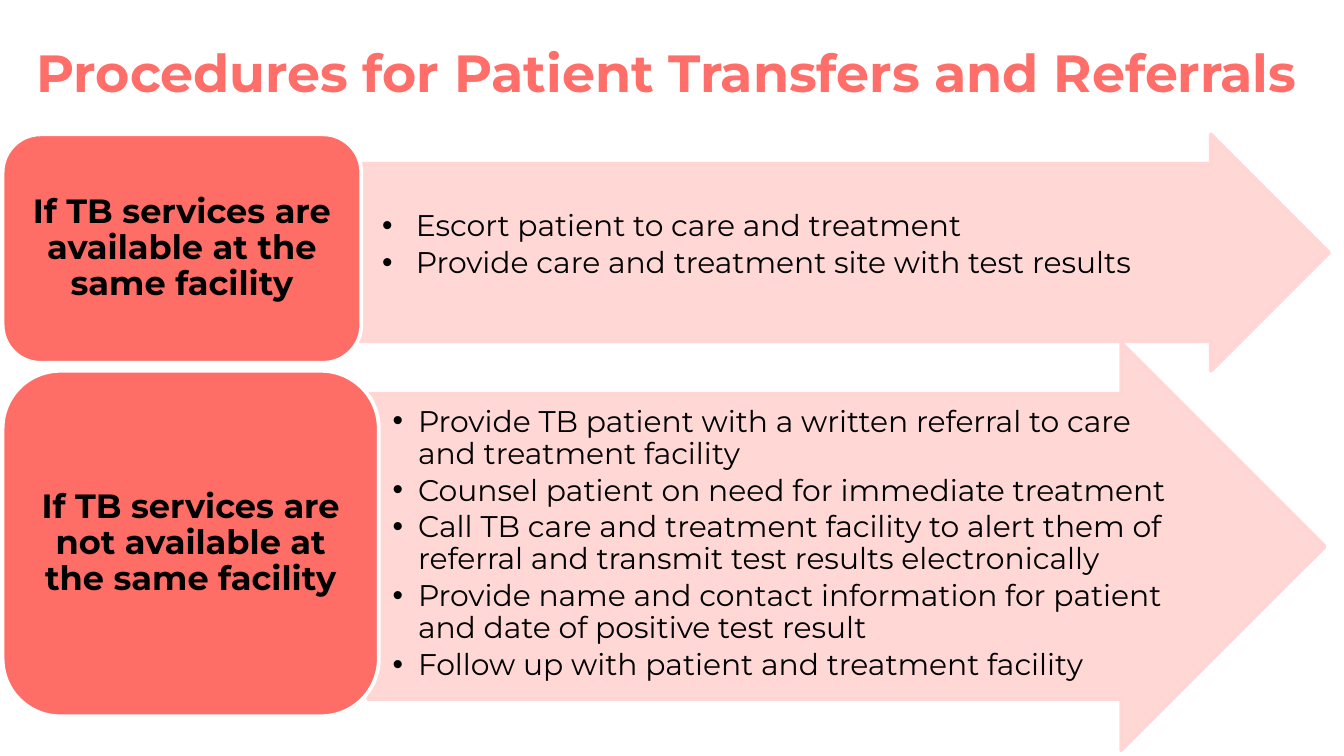
import pptx
import pptx.dml.color
import pptx.enum.shapes
import pptx.enum.text
import pptx.oxml
import pptx.util
from dataclasses import dataclass
from lxml import etree
from pptx.oxml.ns import qn

Cm = pptx.util.Cm
Pt = pptx.util.Pt
SHAPES = pptx.enum.shapes.MSO_SHAPE
ALIGN = pptx.enum.text.PP_ALIGN
ANCHOR = pptx.enum.text.MSO_ANCHOR
AUTO_SIZE = pptx.enum.text.MSO_AUTO_SIZE


@dataclass(frozen=True)
class Theme:
    font: str = "Montserrat"
    title: str = "FF6E68"
    condition: str = "FF6D67"
    arrow: str = "FFD4D2"
    outline: str = "FFFFFF"
    text: str = "000000"
    arrow_opacity: int = 89
    title_size: int = 28
    condition_size: int = 18
    step_size: int = 16
    line_width: int = 2
    line_spacing: float = 0.9
    step_gap: float = 2.4


THEME = Theme()

# Boxes are left, top, width, height in centimetres
TITLE_BOX = (0.43, 0.64, 25.88, 1.45)
PROCEDURES = [
    {
        "condition": "If TB services are available at the same facility",
        "condition_box": (0.05, 2.54, 6.78, 4.32),
        "arrow_box": (6.78, 2.54, 18.34, 4.47),
        "steps_box": (7.19, 3.96, 15.65, 1.6),
        "indent": 0.64,
        "steps": [
            "Escort patient to care and treatment",
            "Provide care and treatment site with test results",
        ],
    },
    {
        "condition": "If TB services are not available at the same facility",
        "condition_box": (0.05, 7.01, 7.11, 6.53),
        "arrow_box": (6.96, 6.48, 18.08, 7.7),
        "steps_box": (7.39, 7.65, 15.24, 5.61),
        "indent": 0.48,
        "steps": [
            "Provide TB patient with a written referral to care and treatment facility",
            "Counsel patient on need for immediate treatment",
            "Call TB care and treatment facility to alert them of referral "
            "and transmit test results electronically",
            "Provide name and contact information for patient and date of positive test result",
            "Follow up with patient and treatment facility",
        ],
    },
]


def rgb(color):
    return pptx.dml.color.RGBColor.from_string(color)


def place(part, box):
    part.left, part.top, part.width, part.height = (Cm(length) for length in box)


def add_run(paragraph, text, size, color, bold=False):
    run = paragraph.add_run()
    run.text = text
    run.font.name = THEME.font
    run.font.size = Pt(size)
    run.font.bold = bold
    run.font.color.rgb = rgb(color)


def add_block(slide, kind, box, fill, line):
    block = slide.shapes.add_shape(kind, *(Cm(length) for length in box))
    block.shadow.inherit = False
    block.fill.solid()
    block.fill.fore_color.rgb = rgb(fill)
    block.line.color.rgb = rgb(line)
    block.line.width = Pt(THEME.line_width)
    return block


def write_title(title, box):
    place(title, box)
    frame = title.text_frame
    frame.auto_size = AUTO_SIZE.NONE
    frame.vertical_anchor = ANCHOR.TOP
    heading = frame.paragraphs[0]
    heading.alignment = ALIGN.LEFT
    add_run(heading, "Procedures for Patient Transfers and Referrals",
            THEME.title_size, THEME.title, bold=True)


def draw_arrow(slide, box):
    arrow = add_block(slide, SHAPES.RIGHT_ARROW, box, THEME.arrow, THEME.arrow)
    arrow.adjustments[0], arrow.adjustments[1] = 0.75, 0.5
    # Fill and outline share one transparency
    for color in arrow._element.spPr.iter(qn("a:srgbClr")):
        etree.SubElement(color, qn("a:alpha"), val=str(THEME.arrow_opacity * 1000))


def draw_condition(slide, box, text):
    condition = add_block(slide, SHAPES.ROUNDED_RECTANGLE, box,
                          THEME.condition, THEME.outline)
    frame = condition.text_frame
    frame.word_wrap = True
    frame.vertical_anchor = ANCHOR.MIDDLE
    paragraph = frame.paragraphs[0]
    paragraph.alignment = ALIGN.CENTER
    paragraph.line_spacing = THEME.line_spacing
    add_run(paragraph, text, THEME.condition_size, THEME.text, bold=True)


def add_bullet(paragraph, indent):
    properties = paragraph._p.get_or_add_pPr()
    properties.set("marL", str(Cm(indent)))
    properties.set("indent", str(-Cm(indent)))
    color = etree.SubElement(properties, qn("a:buClr"))
    etree.SubElement(color, qn("a:srgbClr"), val=THEME.text)
    etree.SubElement(properties, qn("a:buFont"), typeface="Arial")
    etree.SubElement(properties, qn("a:buChar"), char="•")


def write_steps(slide, body, box, steps, indent):
    place(body, box)
    slide.shapes._spTree.append(body._element)  # bring in front of the arrow
    frame = body.text_frame
    frame.auto_size = AUTO_SIZE.NONE
    frame.word_wrap = True
    frame.vertical_anchor = ANCHOR.TOP
    frame.margin_left = frame.margin_right = Cm(0.03)
    frame.margin_top = frame.margin_bottom = Cm(0.03)
    for number, step in enumerate(steps):
        paragraph = frame.add_paragraph() if number else frame.paragraphs[0]
        paragraph.line_spacing = THEME.line_spacing
        paragraph.space_before = Pt(THEME.step_gap if number else 0)
        add_bullet(paragraph, indent)
        add_run(paragraph, step, THEME.step_size, THEME.text)


def draw_procedure(slide, body, procedure):
    draw_arrow(slide, procedure["arrow_box"])
    write_steps(slide, body, procedure["steps_box"], procedure["steps"],
                procedure["indent"])
    draw_condition(slide, procedure["condition_box"], procedure["condition"])


def main():
    deck = pptx.Presentation()
    deck.slide_width, deck.slide_height = Cm(25.4), Cm(14.29)
    # The "Two Content" layout has a title and two lists
    slide = deck.slides.add_slide(deck.slide_layouts.get_by_name("Two Content"))
    title, *bodies = list(slide.placeholders)
    write_title(title, TITLE_BOX)
    for body, procedure in zip(bodies, PROCEDURES):
        draw_procedure(slide, body, procedure)
    deck.save("out.pptx")


if __name__ == "__main__":
    main()
